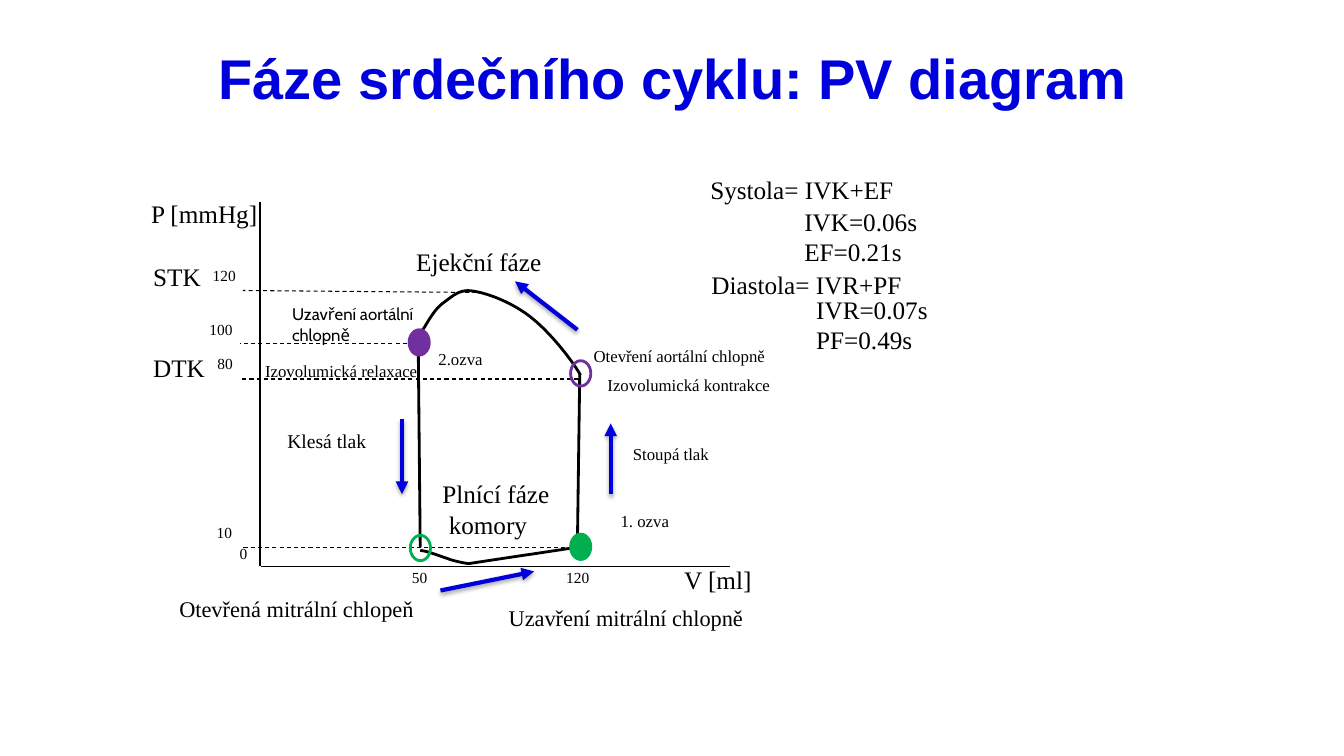
from dataclasses import dataclass
from typing import Optional

from lxml import etree
from pptx import Presentation
from pptx import util as u
from pptx.dml.color import RGBColor
from pptx.enum import dml, shapes, text
from pptx.oxml import ns

Point = tuple[float, float]


@dataclass(frozen=True)
class Theme:
    black: str = "000000"
    blue: str = "0000DC"
    green: str = "00B050"
    purple: str = "7030A0"
    serif: str = "Times New Roman"
    heading: str = "Arial"
    rounded: str = "Cabin"
    title: int = 40
    large: int = 18
    medium: int = 16
    small: int = 14
    note: int = 12
    tick: int = 11


THEME = Theme()


@dataclass(frozen=True)
class Label:
    wording: str
    left: float
    top: float
    width: float
    size: int
    font: str = THEME.serif
    wrap: bool = True
    last_indent: float = 0


@dataclass(frozen=True)
class Stroke:
    start: Point
    end: Point
    weight: float
    color: str = THEME.black
    dashed: bool = False
    arrow: bool = False


@dataclass(frozen=True)
class Valve:
    left: float
    top: float
    color: str
    closed: bool


@dataclass(frozen=True)
class Curve:
    start: Point
    segments: tuple[tuple[Point, Point, Point], ...]


LABELS = [
    Label("0", 5.79, 13.59, 0.79, THEME.tick),
    Label("10", 5.21, 13.06, 1.8, THEME.tick),
    Label("80", 5.23, 8.81, 1.8, THEME.tick),
    Label("100", 5.03, 7.95, 1.8, THEME.tick),
    Label("120", 5.11, 6.58, 2.57, THEME.tick),
    Label("50", 10.13, 14.2, 1.7, THEME.tick),
    Label("120", 14.02, 14.2, 1.7, THEME.tick),
    Label("STK", 3.61, 6.45, 1.8, THEME.large),
    Label("DTK", 3.61, 8.74, 2.21, THEME.large),
    Label("P [mmHg]", 3.56, 4.88, 3.2, THEME.large),
    Label("V [ml]", 16.99, 14.1, 6.2, THEME.large),
    Label("Otevřená mitrální chlopeň", 4.27, 14.88, 8.71, THEME.medium),
    Label("Uzavření mitrální chlopně", 12.57, 15.09, 10.87, THEME.medium),
    Label("Izovolumická relaxace", 6.43, 8.97, 7.21, THEME.note),
    Label("Izovolumická kontrakce", 15.06, 9.32, 7.85, THEME.note),
    Label("Ejekční fáze", 10.24, 6.07, 4.19, THEME.large),
    Label("Plnící fáze\nkomory", 10.9, 11.94, 5.38, THEME.large, last_indent=0.16),
    Label("Systola= IVK+EF", 17.65, 4.27, 5.44, THEME.large),
    Label("IVK=0.06s\nEF=0.21s", 20.02, 5.08, 4.88, THEME.large),
    Label("Diastola= IVR+PF", 17.68, 6.65, 6.81, THEME.large),
    Label("IVR=0.07s\nPF=0.49s", 20.32, 7.29, 4.8, THEME.large),
    Label("Klesá tlak", 6.99, 10.67, 2.62, THEME.small, wrap=False),
    Label("Stoupá tlak", 15.7, 11.05, 2.46, THEME.note, wrap=False),
    Label("Otevření aortální chlopně", 14.71, 8.59, 4.9, THEME.note, wrap=False),
    Label("1. ozva", 15.39, 12.75, 1.75, THEME.note, wrap=False),
    Label("2.ozva", 10.8, 8.66, 1.65, THEME.note, wrap=False),
    Label("Uzavření aortální\nchlopně", 7.11, 7.54, 3.81, THEME.note, THEME.rounded),
]

PRESSURE_LEVELS = [
    Stroke((14.61, 13.79), (6.1, 13.79), 0.75, dashed=True),
    Stroke((14.58, 9.55), (6.07, 9.55), 0.75, dashed=True),
    Stroke((10.62, 8.66), (6.05, 8.66), 0.75, dashed=True),
    Stroke((12.01, 7.37), (6.12, 7.32), 0.75, dashed=True),
]
ISOVOLUMIC_PHASES = [
    Stroke((10.54, 8.61), (10.59, 13.79), 2),
    Stroke((14.61, 9.42), (14.55, 13.79), 2),
]
AXES = [
    Stroke((6.55, 5.08), (6.55, 14.27), 1),
    Stroke((18.39, 14.27), (6.58, 14.27), 1),
]
DIRECTIONS = [
    Stroke(start, end, 3, THEME.blue, arrow=True)
    for start, end in [
        ((15.39, 12.45), (15.39, 10.67)),
        ((14.55, 8.31), (12.98, 7.09)),
        ((10.13, 10.57), (10.13, 12.45)),
        ((11.1, 14.88), (13.46, 14.4)),
    ]
]
EJECTION = Curve((10.52, 8.61), (
    ((10.57, 8.53), (10.59, 8.38), (10.69, 8.26)),
    ((10.77, 8.13), (10.95, 7.8), (11.15, 7.65)),
    ((11.38, 7.49), (11.58, 7.26), (11.94, 7.34)),
    ((12.29, 7.39), (12.9, 7.62), (13.36, 7.98)),
    ((13.82, 8.33), (14.38, 9.02), (14.63, 9.45)),
))
FILLING = Curve((10.59, 13.87), (
    ((10.82, 13.89), (11.3, 14.1), (11.28, 14.07)),
    ((11.28, 14.1), (11.79, 14.22), (11.84, 14.2)),
    ((12.74, 14.06), (13.65, 13.93), (14.55, 13.79)),
))
VALVES = [
    Valve(14.38, 13.46, THEME.green, True),
    Valve(10.34, 13.49, THEME.green, False),
    Valve(14.38, 9.09, THEME.purple, False),
    Valve(10.31, 8.31, THEME.purple, True),
]


def style_line(line, color: str, weight: float) -> None:
    line.color.rgb = RGBColor.from_string(color)
    line.width = u.Pt(weight)


def style_font(font, family: str, size: int, color: str, bold: Optional[bool] = None) -> None:
    font.name, font.size, font.bold = family, u.Pt(size), bold
    font.color.rgb = RGBColor.from_string(color)


def draw_title(slide, wording: str) -> None:
    heading = slide.shapes.title
    heading.left, heading.top = u.Cm(2.01), u.Cm(1.37)
    heading.width, heading.height = u.Cm(29.87), u.Cm(1.24)
    frame = heading.text_frame
    frame.text = wording
    frame.auto_size = text.MSO_AUTO_SIZE.NONE
    frame.vertical_anchor = text.MSO_ANCHOR.TOP
    frame.margin_left = frame.margin_right = frame.margin_top = frame.margin_bottom = 0
    paragraph = frame.paragraphs[0]
    paragraph.alignment = text.PP_ALIGN.CENTER
    paragraph.line_spacing = u.Pt(THEME.title)
    style_font(paragraph.font, THEME.heading, THEME.title, THEME.blue, True)


def draw_label(slide, label: Label) -> None:
    line_count = label.wording.count("\n") + 1
    height = 0.25 + line_count * label.size * 0.0425
    frame = slide.shapes.add_textbox(
        u.Cm(label.left), u.Cm(label.top), u.Cm(label.width), u.Cm(height)).text_frame
    frame.word_wrap = label.wrap
    frame.auto_size = text.MSO_AUTO_SIZE.SHAPE_TO_FIT_TEXT
    frame.text = label.wording
    for paragraph in frame.paragraphs:
        style_font(paragraph.font, label.font, label.size, THEME.black)
    if label.last_indent:
        frame.paragraphs[-1]._p.get_or_add_pPr().set("marL", str(u.Cm(label.last_indent)))


def draw_stroke(slide, stroke: Stroke) -> None:
    ends = [u.Cm(length) for length in stroke.start + stroke.end]
    connector = slide.shapes.add_connector(shapes.MSO_CONNECTOR.STRAIGHT, *ends)
    style_line(connector.line, stroke.color, stroke.weight)
    if stroke.dashed:
        connector.line.dash_style = dml.MSO_LINE.DASH
    effects = etree.SubElement(connector._element.spPr, ns.qn("a:effectLst"))
    if stroke.arrow:
        etree.SubElement(connector.line._get_or_add_ln(), ns.qn("a:tailEnd"), type="triangle")
        shadow = etree.SubElement(effects, ns.qn("a:outerShdw"), blurRad=str(u.Pt(3.1)),
                                  dist=str(u.Pt(1.8)), dir="5400000", rotWithShape="0")
        tint = etree.SubElement(shadow, ns.qn("a:srgbClr"), val=THEME.black)
        etree.SubElement(tint, ns.qn("a:alpha"), val="35000")


def bezier(p0: Point, p1: Point, p2: Point, p3: Point, steps: int = 12) -> list[Point]:
    return [
        tuple((1 - t) ** 3 * a + 3 * (1 - t) ** 2 * t * b + 3 * (1 - t) * t ** 2 * c + t ** 3 * d
              for a, b, c, d in zip(p0, p1, p2, p3))
        for t in (step / steps for step in range(1, steps + 1))
    ]


def draw_curve(slide, curve: Curve) -> None:
    points = [curve.start]
    for segment in curve.segments:
        points += bezier(points[-1], *segment)
    start, *rest = [(u.Cm(x), u.Cm(y)) for x, y in points]
    builder = slide.shapes.build_freeform(*start)
    builder.add_line_segments(rest, close=False)
    outline = builder.convert_to_shape()
    outline.shadow.inherit = False
    outline.fill.background()
    style_line(outline.line, THEME.black, 2)


def draw_valve(slide, valve: Valve) -> None:
    marker = slide.shapes.add_shape(
        shapes.MSO_SHAPE.OVAL, u.Cm(valve.left), u.Cm(valve.top), u.Cm(0.51), u.Cm(0.64))
    marker.shadow.inherit = False
    style_line(marker.line, valve.color, 2)
    if valve.closed:
        marker.fill.solid()
        marker.fill.fore_color.rgb = RGBColor.from_string(valve.color)
    else:
        marker.fill.background()


def main() -> None:
    deck = Presentation()
    deck.slide_width, deck.slide_height = u.Cm(33.87), u.Cm(19.05)
    slide = deck.slides.add_slide(deck.slide_layouts[5])
    draw_title(slide, "Fáze srdečního cyklu: PV diagram")
    for stroke in PRESSURE_LEVELS + ISOVOLUMIC_PHASES + AXES:
        draw_stroke(slide, stroke)
    for curve in (EJECTION, FILLING):
        draw_curve(slide, curve)
    for valve in VALVES:
        draw_valve(slide, valve)
    for label in LABELS:
        draw_label(slide, label)
    for stroke in DIRECTIONS:
        draw_stroke(slide, stroke)
    deck.save("out.pptx")


if __name__ == "__main__":
    main()
